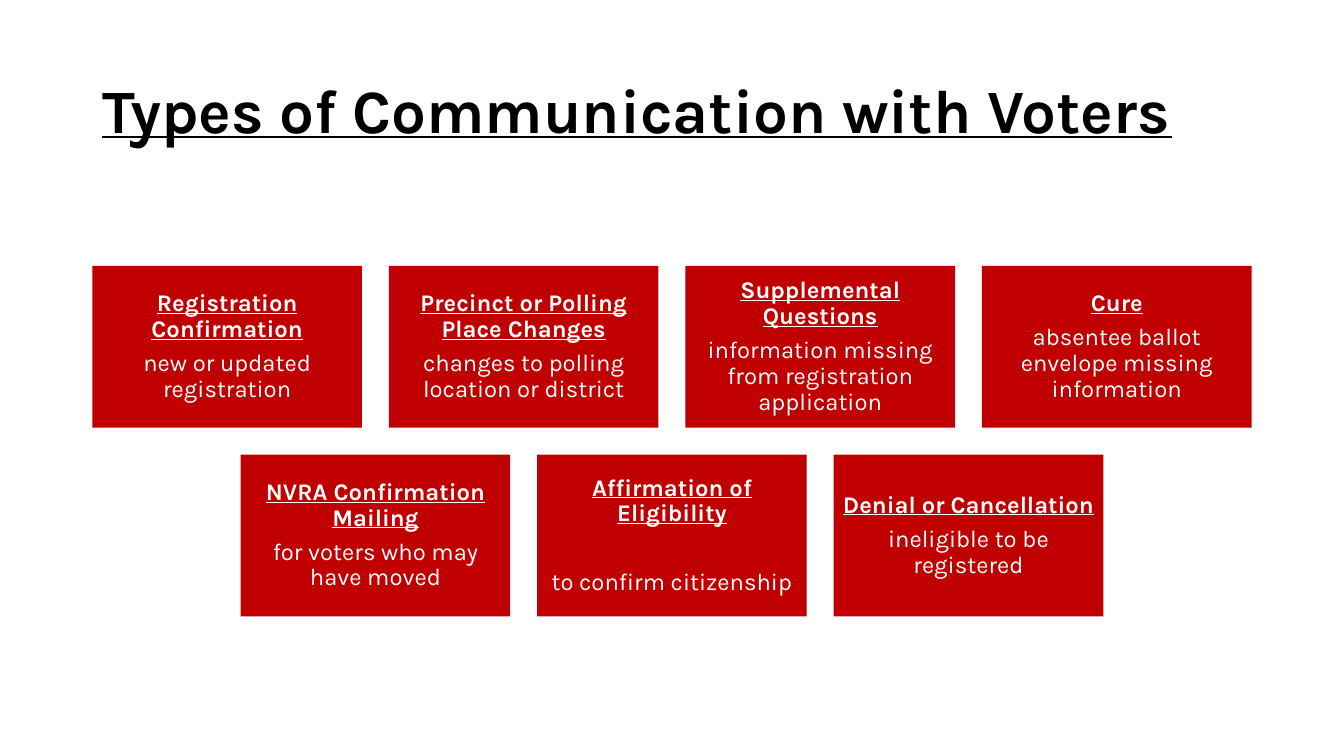
from pptx import Presentation
from pptx.dml.color import RGBColor
from pptx.enum.shapes import MSO_SHAPE as Shape
from pptx.enum.text import MSO_ANCHOR as Anchor, PP_ALIGN as Align
from pptx.util import Cm, Pt

BLACK = RGBColor(0x00, 0x00, 0x00)
WHITE = RGBColor(0xFF, 0xFF, 0xFF)
RED = RGBColor(0xC0, 0x00, 0x00)

FONT = "Karla"
TITLE_FORMAT = {"name": FONT, "size": Pt(44), "bold": True, "underline": True}
HEADING_FORMAT = {"name": FONT, "size": Pt(17), "bold": True, "underline": True}
DETAIL_FORMAT = {"name": FONT, "size": Pt(17), "bold": False, "underline": False}

NORMAL_GAP = Pt(6)
WIDE_GAP = Pt(30.4)
COLUMNS = 4
GAP_RATIO = 0.1
HEIGHT_RATIO = 0.6

CARD_ROWS = [
    [
        ("Registration Confirmation", "new or updated registration", NORMAL_GAP),
        ("Precinct or Polling Place Changes", "changes to polling location or district", NORMAL_GAP),
        ("Supplemental Questions", "information missing from registration application", NORMAL_GAP),
        ("Cure", "absentee ballot envelope missing information", NORMAL_GAP),
    ],
    [
        ("NVRA Confirmation Mailing", "for voters who may have moved", NORMAL_GAP),
        ("Affirmation of Eligibility", "to confirm citizenship", WIDE_GAP),
        ("Denial or Cancellation", "ineligible to be registered", NORMAL_GAP),
    ],
]


def write_paragraph(paragraph, text, font_format, color, alignment):
    paragraph.alignment = alignment
    paragraph.line_spacing = 0.9
    run = paragraph.add_run()
    run.text = text
    for name, value in font_format.items():
        setattr(run.font, name, value)
    run.font.color.rgb = color


def add_title(slide, left, top, width, height):
    text_box = slide.shapes.add_textbox(Cm(left), Cm(top), Cm(width), Cm(height))
    text_frame = text_box.text_frame
    text_frame.word_wrap = True
    text_frame.vertical_anchor = Anchor.MIDDLE
    write_paragraph(text_frame.paragraphs[0], "Types of Communication with Voters",
                    TITLE_FORMAT, BLACK, Align.LEFT)


def add_card(slide, left, top, width, height, heading, detail, gap):
    card = slide.shapes.add_shape(Shape.RECTANGLE, Cm(left), Cm(top), Cm(width), Cm(height))
    card.shadow.inherit = False
    card.fill.solid()
    card.fill.fore_color.rgb = RED
    card.line.fill.background()
    text_frame = card.text_frame
    text_frame.word_wrap = True
    text_frame.vertical_anchor = Anchor.MIDDLE
    for side in ("left", "right", "top", "bottom"):
        setattr(text_frame, f"margin_{side}", Cm(0.18))
    heading_paragraph = text_frame.paragraphs[0]
    write_paragraph(heading_paragraph, heading, HEADING_FORMAT, WHITE, Align.CENTER)
    heading_paragraph.space_after = gap
    write_paragraph(text_frame.add_paragraph(), detail, DETAIL_FORMAT, WHITE, Align.CENTER)


def add_card_rows(slide, left, top, width):
    card_width = width / (COLUMNS + (COLUMNS - 1) * GAP_RATIO)
    card_height = card_width * HEIGHT_RATIO
    gap = card_width * GAP_RATIO
    for row_index, row in enumerate(CARD_ROWS):
        row_width = len(row) * (card_width + gap) - gap
        row_left = left + (width - row_width) / 2
        row_top = top + row_index * (card_height + gap)
        for column_index, card in enumerate(row):
            card_left = row_left + column_index * (card_width + gap)
            add_card(slide, card_left, row_top, card_width, card_height, *card)


def main():
    presentation = Presentation()
    presentation.slide_width = Cm(33.87)
    presentation.slide_height = Cm(19.05)
    slide = presentation.slides.add_slide(presentation.slide_layouts[6])
    add_title(slide, 2.33, 1.01, 29.21, 3.68)
    add_card_rows(slide, 2.33, 6.7, 29.21)
    presentation.save("out.pptx")


if __name__ == "__main__":
    main()
